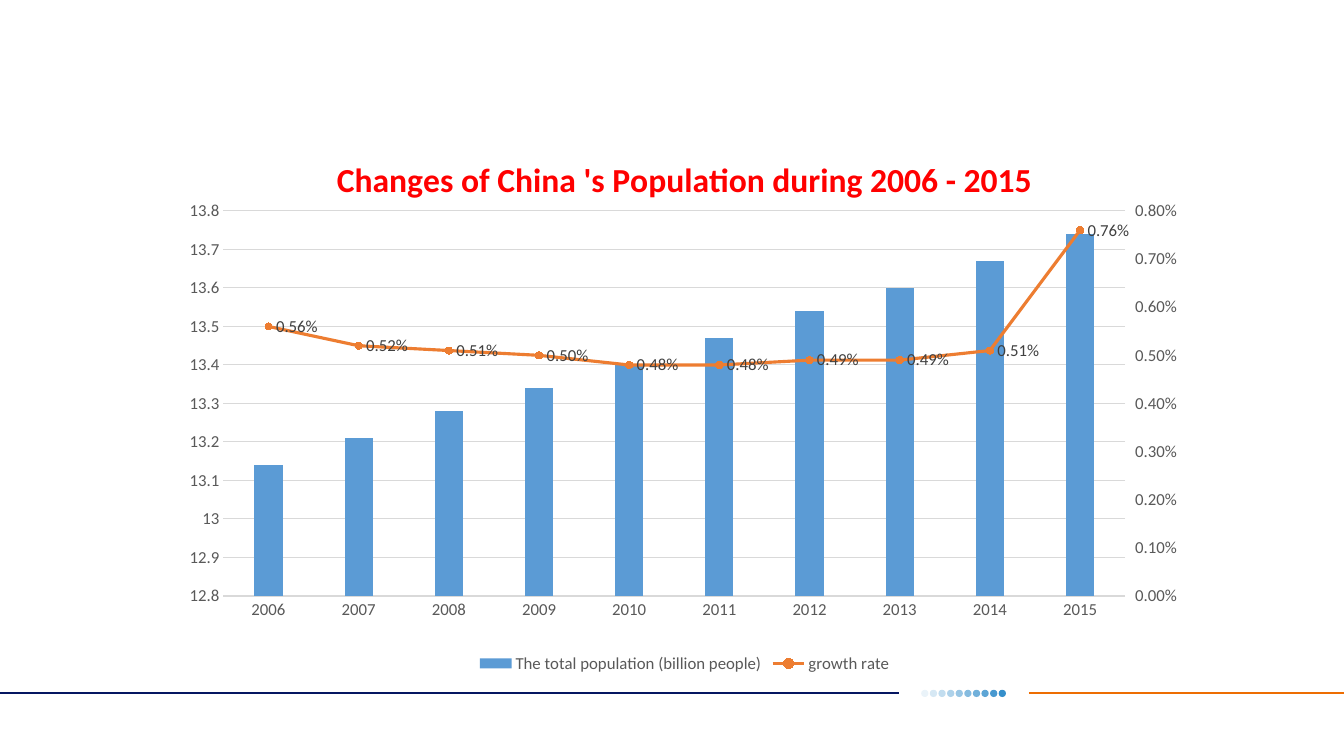
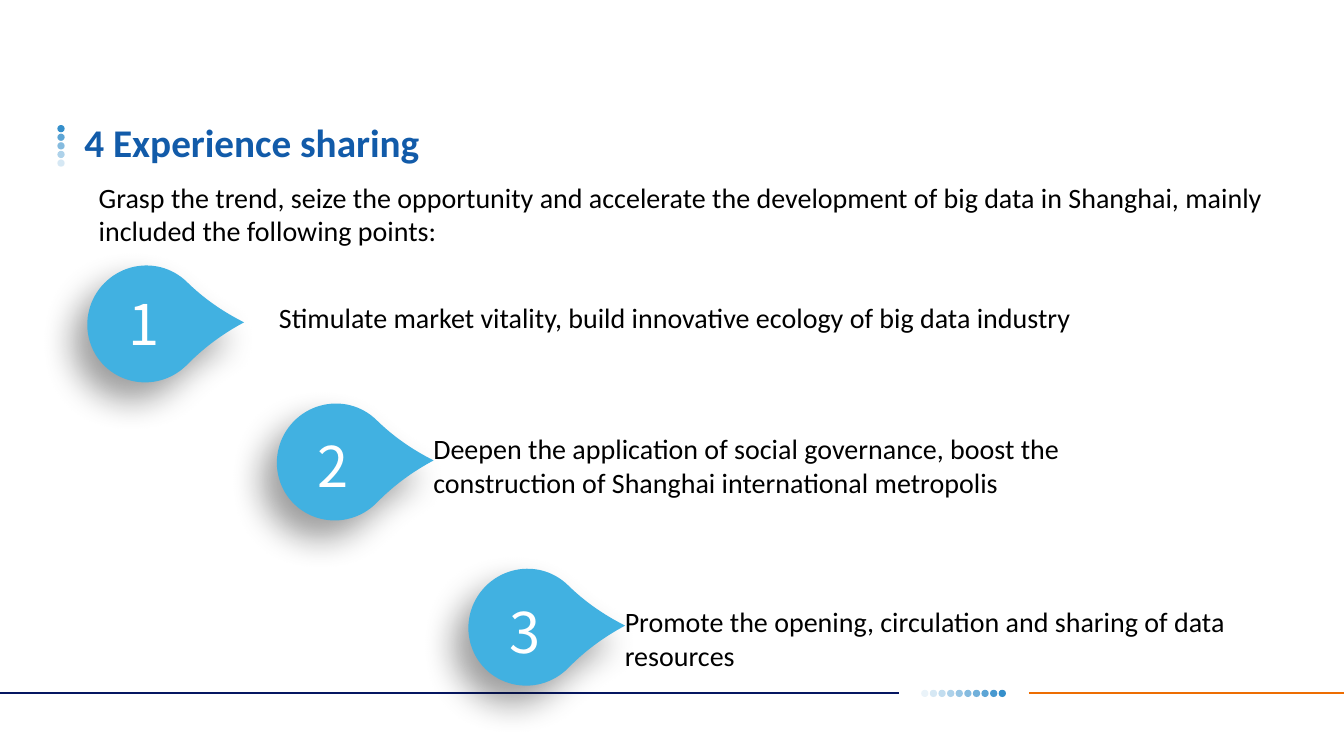
from collections import namedtuple
from copy import deepcopy
from dataclasses import dataclass

from pptx import Presentation
from pptx import util as u
from pptx.chart import axis as ax
from pptx.chart import data as cd
from pptx.dml import color as col
from pptx.enum import chart as ch
from pptx.enum import shapes as sh
from pptx.enum import text as tx
from pptx.oxml import ns, parse_xml

Box = namedtuple("Box", "left top width height")
Point = namedtuple("Point", "drop number_top label text")


@dataclass(frozen=True)
class Theme:
    navy: str = "051661"
    orange: str = "ED6D02"
    dot: str = "358FCB"
    drop: str = "41B1E1"
    bar: str = "5B9BD5"
    rate: str = "ED7D31"
    grid: str = "D9D9D9"
    dot_size: float = 5.2
    dot_step: float = 6.15
    heading = {"name": "Calibri", "size": 28, "bold": True, "color": "125BA9"}
    body = {"name": "Calibri", "size": 20, "color": "000000"}
    number = {"name": "Noto Sans CJK SC", "size": 40, "color": "FFFFFF"}
    chart_title = {"name": "Calibri", "size": 24, "bold": True, "color": "FF0000"}
    chart_text = {"name": "Calibri", "size": 12, "color": "595959"}
    chart_label = {"name": "Calibri", "size": 12, "color": "404040"}


THEME = Theme()
SLIDE = Box(0, 0, 960, 540)

YEARS = [str(year) for year in range(2006, 2016)]
POPULATION = [13.14, 13.21, 13.28, 13.34, 13.40, 13.47, 13.54, 13.60, 13.67, 13.74]
GROWTH = [0.0056, 0.0052, 0.0051, 0.0050, 0.0048, 0.0048, 0.0049, 0.0049, 0.0051, 0.0076]

POINTS = [
    Point(Box(62.6, 189.4, 83, 84), 13.6, Box(192.2, 211, 646, 31),
          "Stimulate market vitality, build innovative ecology of big data industry"),
    Point(Box(198, 288, 83, 84), 17, Box(302.4, 304.6, 564, 55),
          "Deepen the application of social governance, boost the construction of "
          "Shanghai international metropolis"),
    Point(Box(334.8, 406, 83, 84), 17, Box(439.2, 428.4, 485, 55),
          "Promote the opening, circulation and sharing of data resources"),
]


# Shared helpers
def rgb(value):
    return col.RGBColor.from_string(value)


def place(box):
    return [u.Pt(value) for value in box]


def set_values(target, values):
    for name, value in values.items():
        setattr(target, name, value)


def set_font(font, style):
    for name, value in style.items():
        if name == "color":
            font.color.rgb = rgb(value)
        else:
            setattr(font, name, u.Pt(value) if name == "size" else value)


def add_text(shapes, box, words, style, wrap=True):
    frame = shapes.add_textbox(*place(box)).text_frame
    set_values(frame, {"word_wrap": wrap, "auto_size": tx.MSO_AUTO_SIZE.SHAPE_TO_FIT_TEXT})
    span = frame.paragraphs[0].add_run()
    span.text = words
    set_font(span.font, style)


def add_filled(shapes, kind, box, color):
    shape = shapes.add_shape(kind, *place(box))
    shape.shadow.inherit = False
    shape.fill.solid()
    shape.fill.fore_color.rgb = rgb(color)
    shape.line.fill.background()
    return shape


def add_rule(page, start, end, top, color):
    rule = page.shapes.add_connector(
        sh.MSO_CONNECTOR.STRAIGHT, *place((start, top, end, top)))
    rule.line.color.rgb = rgb(color)
    rule.line.width = u.Pt(1.5)
    rule.element.spPr.append(parse_xml(f"<a:effectLst {ns.nsdecls('a')}/>"))


def add_dots(page, left, top, opacities, across):
    """Row or column of dots, one for each opacity in percent."""
    group = page.shapes.add_group_shape()
    for index, opacity in enumerate(opacities):
        shift = index * THEME.dot_step
        box = Box(left + shift * across, top + shift * (not across),
                  THEME.dot_size, THEME.dot_size)
        dot = add_filled(group.shapes, sh.MSO_SHAPE.OVAL, box, THEME.dot)
        if opacity < 100:
            dot.element.xpath("./p:spPr/a:solidFill/a:srgbClr")[0].append(
                parse_xml(f'<a:alpha {ns.nsdecls("a")} val="{opacity * 1000}"/>'))


def add_footer(page, box):
    middle = box.top + box.height / 2
    add_rule(page, box.left, box.left + 642, middle, THEME.navy)
    add_rule(page, box.left + 735, box.left + box.width, middle, THEME.orange)
    add_dots(page, box.left + 658, middle - THEME.dot_size / 2, range(10, 101, 10), True)


def add_page(deck):
    page = deck.slides.add_slide(deck.slide_layouts[6])
    add_footer(page, Box(0, 492, SLIDE.width, 6.6))
    return page


# Chart: columns on the left axis, line on the right axis
def format_axes(chart):
    years, people = chart.category_axis, chart.value_axis
    for axis in (years, people):
        set_values(axis, {"major_tick_mark": ch.XL_TICK_MARK.NONE,
                          "minor_tick_mark": ch.XL_TICK_MARK.NONE})
        set_font(axis.tick_labels.font, THEME.chart_text)
    set_values(people, {"minimum_scale": 12.8, "maximum_scale": 13.8, "major_unit": 0.1,
                        "has_major_gridlines": True})
    set_values(people.tick_labels, {"number_format": "General",
                                    "number_format_is_linked": False})
    people.format.line.fill.background()
    for line in (years.format.line, people.major_gridlines.format.line):
        line.color.rgb = rgb(THEME.grid)
        line.width = u.Pt(0.75)


def move_rate_to_line(chart):
    """Turn the second series into a line with its own pair of axes."""
    root = chart.element
    bars = root.xpath(".//c:barChart")[0]
    series = bars.xpath("./c:ser")[1]
    for flag in series.xpath("./c:invertIfNegative"):
        series.remove(flag)
    line = parse_xml(
        f'<c:lineChart {ns.nsdecls("c")}><c:grouping val="standard"/><c:varyColors val="0"/>'
        '<c:marker val="1"/><c:axId val="5001"/><c:axId val="5002"/></c:lineChart>')
    line.insert(2, series)
    bars.addnext(line)

    left = root.xpath(".//c:valAx")[0]
    hidden, right = deepcopy(root.xpath(".//c:catAx")[0]), deepcopy(left)
    for element, own, other in ((hidden, "5001", "5002"), (right, "5002", "5001")):
        element.xpath("./c:axId")[0].set("val", own)
        element.xpath("./c:crossAx")[0].set("val", other)
    right.xpath("./c:axPos")[0].set("val", "r")
    right.xpath("./c:crosses")[0].set("val", "max")
    left.addnext(right)
    right.addnext(hidden)
    ax.CategoryAxis(hidden).visible = False
    rate_axis = ax.ValueAxis(right)
    set_values(rate_axis, {"minimum_scale": 0, "maximum_scale": 0.008, "major_unit": 0.001,
                           "has_major_gridlines": False,
                           "major_tick_mark": ch.XL_TICK_MARK.CROSS})
    rate_axis.tick_labels.number_format = "0.00%"


def set_plot_area(chart, area):
    plot_area = chart.element.xpath(".//c:plotArea")[0]
    for layout in plot_area.xpath("./c:layout"):
        plot_area.remove(layout)
    sizes = "".join(f'<c:{name} val="{value}"/>' for name, value in zip("xywh", area))
    plot_area.insert(0, parse_xml(
        f'<c:layout {ns.nsdecls("c")}><c:manualLayout><c:layoutTarget val="inner"/>'
        f'<c:xMode val="edge"/><c:yMode val="edge"/>{sizes}</c:manualLayout></c:layout>'))


def format_rate(series):
    series.smooth = False
    series.format.line.color.rgb = rgb(THEME.rate)
    series.format.line.width = u.Pt(2.25)
    set_values(series.marker, {"style": ch.XL_MARKER_STYLE.CIRCLE, "size": 5})
    for part in (series.marker.format.fill, series.marker.format.line.fill):
        part.solid()
        part.fore_color.rgb = rgb(THEME.rate)
    labels = series.data_labels
    set_values(labels, {"show_value": True, "number_format": "0.00%",
                        "number_format_is_linked": False,
                        "position": ch.XL_LABEL_POSITION.RIGHT})
    set_font(labels.font, THEME.chart_label)


def add_population_chart(page, box):
    data = cd.CategoryChartData()
    data.categories = YEARS
    data.add_series("The total population (billion people)", POPULATION, "General")
    data.add_series("growth rate", GROWTH, "0.00%")
    chart = page.shapes.add_chart(
        ch.XL_CHART_TYPE.COLUMN_CLUSTERED, *place(box), data).chart
    set_font(chart.font, THEME.chart_text)
    set_values(chart, {"has_title": True, "has_legend": True})

    span = chart.chart_title.text_frame.paragraphs[0].add_run()
    span.text = "Changes of China 's Population during 2006 - 2015"
    set_font(span.font, THEME.chart_title)
    set_values(chart.legend, {"position": ch.XL_LEGEND_POSITION.BOTTOM,
                              "include_in_layout": False})
    set_font(chart.legend.font, THEME.chart_text)

    format_axes(chart)
    move_rate_to_line(chart)
    set_plot_area(chart, (0.05, 0.14, 0.88, 0.71))
    columns, line = chart.plots
    set_values(columns, {"gap_width": 219, "overlap": -27, "vary_by_categories": False})
    fill = columns.series[0].format.fill
    fill.solid()
    fill.fore_color.rgb = rgb(THEME.bar)
    format_rate(line.series[0])


# Experience slide: heading and numbered drops
def add_heading(page, box, words):
    add_dots(page, box.left, box.top + 8, range(100, 0, -20), False)
    add_text(page.shapes, Box(box.left + 12.3, box.top, box.width - 12.3, box.height),
             words, THEME.heading)


def add_drop(page, box, number, number_top):
    group = page.shapes.add_group_shape()
    drop = add_filled(group.shapes, sh.MSO_SHAPE.TEAR, box, THEME.drop)
    drop.adjustments[0] = 1.19
    drop.rotation = 44.4
    drop.element.xpath("./p:spPr/a:effectLst")[0].append(parse_xml(
        f'<a:outerShdw {ns.nsdecls("a")} blurRad="{u.Pt(24)}" dist="{u.Pt(16)}" '
        f'dir="{130 * 60000}" algn="tr" rotWithShape="0"><a:srgbClr val="0D0D0D">'
        '<a:alpha val="40000"/></a:srgbClr></a:outerShdw>'))
    add_text(group.shapes, Box(box.left + 22, box.top + number_top, 38, 58),
             str(number), THEME.number, wrap=False)


def add_experience(page, box):
    add_heading(page, Box(box.left, box.top, 740, 41), "4 Experience sharing")
    add_text(page.shapes, Box(box.left + 22.4, box.top + 44, 849, 55),
             "Grasp the trend, seize the opportunity and accelerate the development of "
             "big data in Shanghai, mainly included the following points:", THEME.body)
    for number, point in enumerate(POINTS, 1):
        add_drop(page, point.drop, number, point.number_top)
        add_text(page.shapes, point.label, point.text, THEME.body)


def main():
    deck = Presentation()
    set_values(deck, {"slide_width": u.Pt(SLIDE.width), "slide_height": u.Pt(SLIDE.height)})
    add_population_chart(add_page(deck), Box(123, 96.5, 732, 387.4))
    add_experience(add_page(deck), Box(41, 81.3, 880, 410))
    deck.save("out.pptx")


if __name__ == "__main__":
    main()
